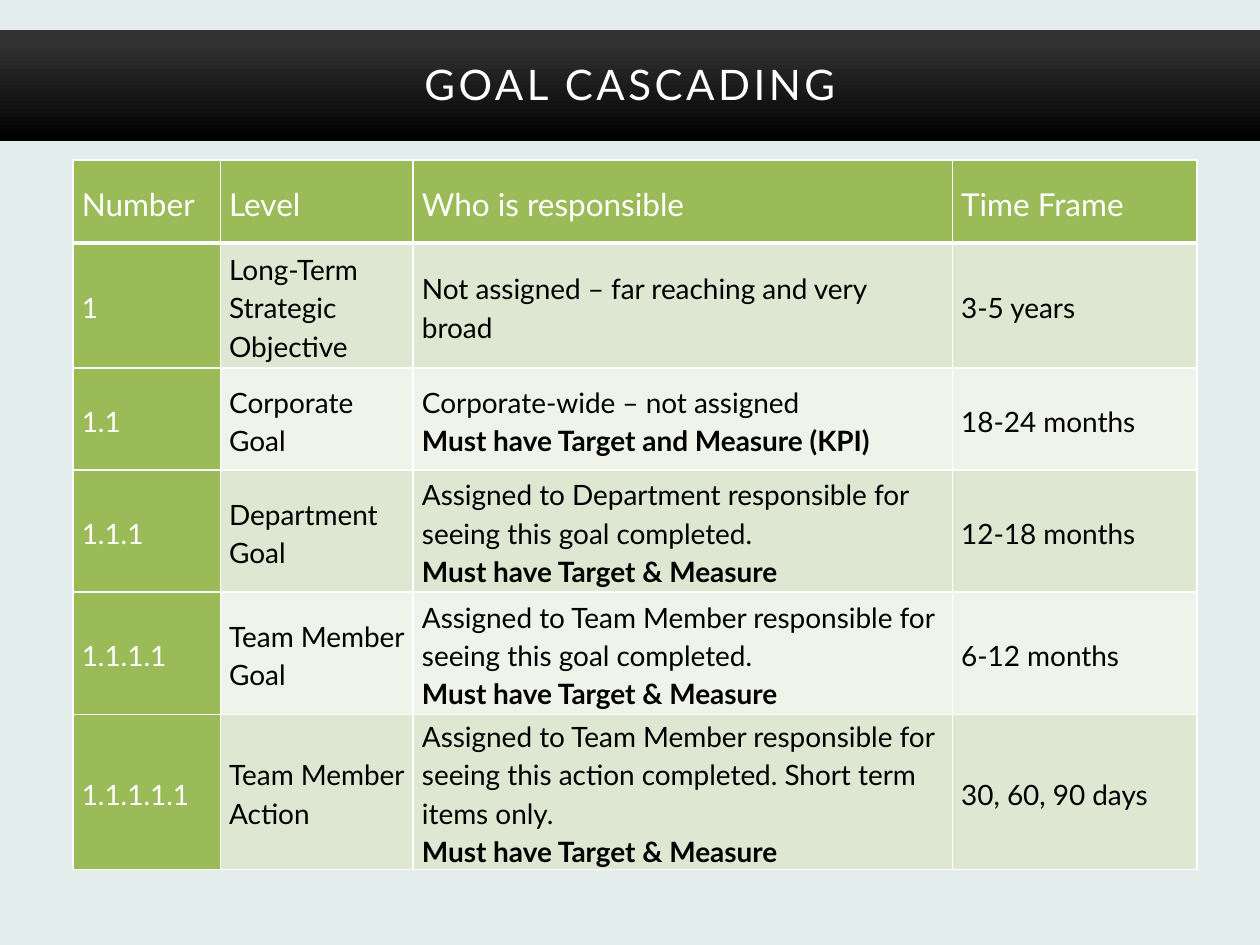
"""Build the Goal Cascading slide with its table of goal levels."""
from lxml import etree
from pptx import Presentation
from pptx import util as u
from pptx.dml.color import RGBColor
from pptx.enum import shapes, text
from pptx.oxml.ns import qn


def color(value):
    return RGBColor.from_string(value)


def write(paragraph, words, size, tint, bold=False):
    run = paragraph.add_run()
    run.text = words
    font_format = {"name": "Lato", "size": u.Pt(size), "bold": bold}
    for name, value in font_format.items():
        setattr(run.font, name, value)
    run.font.color.rgb = color(tint)
    return run


presentation = Presentation()
presentation.slide_width = u.Pt(720)
presentation.slide_height = u.Pt(540)
slide = presentation.slides.add_slide(presentation.slide_layouts[6])

panels = []
for top, height in [(0, 540), (17.28, 63.36)]:
    shape = slide.shapes.add_shape(
        shapes.MSO_SHAPE.RECTANGLE, 0, u.Pt(top), u.Pt(720), u.Pt(height))
    shape.shadow.inherit = False
    shape.line.fill.background()
    panels.append(shape)
backdrop, band = panels
backdrop.fill.solid()
backdrop.fill.fore_color.rgb = color("E3EDEC")
band.fill.gradient()
band.fill.gradient_angle = 90
for stop, (position, tint) in zip(band.fill.gradient_stops, [(0, "000000"), (0.9, "313231")]):
    stop.position = position
    stop.color.rgb = color(tint)

title = slide.shapes.add_textbox(u.Pt(50.4), u.Pt(2.88), u.Pt(619.2), u.Pt(90))
title.text_frame.word_wrap = True
title.text_frame.vertical_anchor = text.MSO_ANCHOR.MIDDLE
paragraph = title.text_frame.paragraphs[0]
paragraph.alignment = text.PP_ALIGN.CENTER
run = write(paragraph, "GOAL CASCADING", 24, "FFFFFF")
run.font._element.set("spc", "200")

measure = "Must have Target & Measure"
rows = [
    ["Number", "Level", ["Who is responsible"], "Time Frame"],
    ["1", "Long-Term Strategic Objective",
     ["Not assigned – far reaching and very broad"], "3-5 years"],
    ["1.1", "Corporate Goal",
     ["Corporate-wide – not assigned", "Must have Target and Measure (KPI)"], "18-24 months"],
    ["1.1.1", "Department Goal",
     ["Assigned to Department responsible for seeing this goal completed.", measure],
     "12-18 months"],
    ["1.1.1.1", "Team Member Goal",
     ["Assigned to Team Member responsible for seeing this goal completed.", measure],
     "6-12 months"],
    ["1.1.1.1.1", "Team Member Action",
     ["Assigned to Team Member responsible for seeing this action completed. "
      "Short term items only.", measure], "30, 60, 90 days"],
]
widths = [84.24, 110.16, 308.16, 139.68]
heights = [47.52, 71.28, 58.32, 69.84, 69.84, 88.56]
table = slide.shapes.add_table(
    len(rows), len(widths), u.Pt(41.76), u.Pt(91.44),
    u.Pt(sum(widths)), u.Pt(sum(heights))).table
table.horz_banding = False
for column, width in zip(table.columns, widths):
    column.width = u.Pt(width)

cell_format = {
    "margin_left": u.Pt(5), "margin_right": u.Pt(5), "margin_top": 0, "margin_bottom": 0,
    "vertical_anchor": text.MSO_ANCHOR.MIDDLE,
}
for row_index, (row, height) in enumerate(zip(rows, heights)):
    table.rows[row_index].height = u.Pt(height)
    header = row_index == 0
    for column_index, content in enumerate(row):
        cell = table.cell(row_index, column_index)
        for name, value in cell_format.items():
            setattr(cell, name, value)
        accent = header or column_index == 0
        properties = cell._tc.get_or_add_tcPr()
        for side in ["L", "R", "T", "B"]:
            weight = 3 if header and side == "B" else 1
            border = etree.SubElement(properties, qn("a:ln" + side), w=str(u.Pt(weight)))
            fill = etree.SubElement(border, qn("a:solidFill"))
            etree.SubElement(fill, qn("a:srgbClr"), val="FFFFFF")
        cell.fill.solid()
        cell.fill.fore_color.rgb = color(
            "9BBB59" if accent else "DEE7D1" if row_index % 2 else "EFF3EA")

        lines = content if isinstance(content, list) else [content]
        for line_index, line in enumerate(lines):
            frame = cell.text_frame
            paragraph = frame.add_paragraph() if line_index else frame.paragraphs[0]
            paragraph.line_spacing = 1.15
            paragraph.space_after = u.Pt(10 if header else 0)
            write(paragraph, line, 18 if header else 16,
                  "FFFFFF" if accent else "000000", line_index > 0)

presentation.save("out.pptx")
